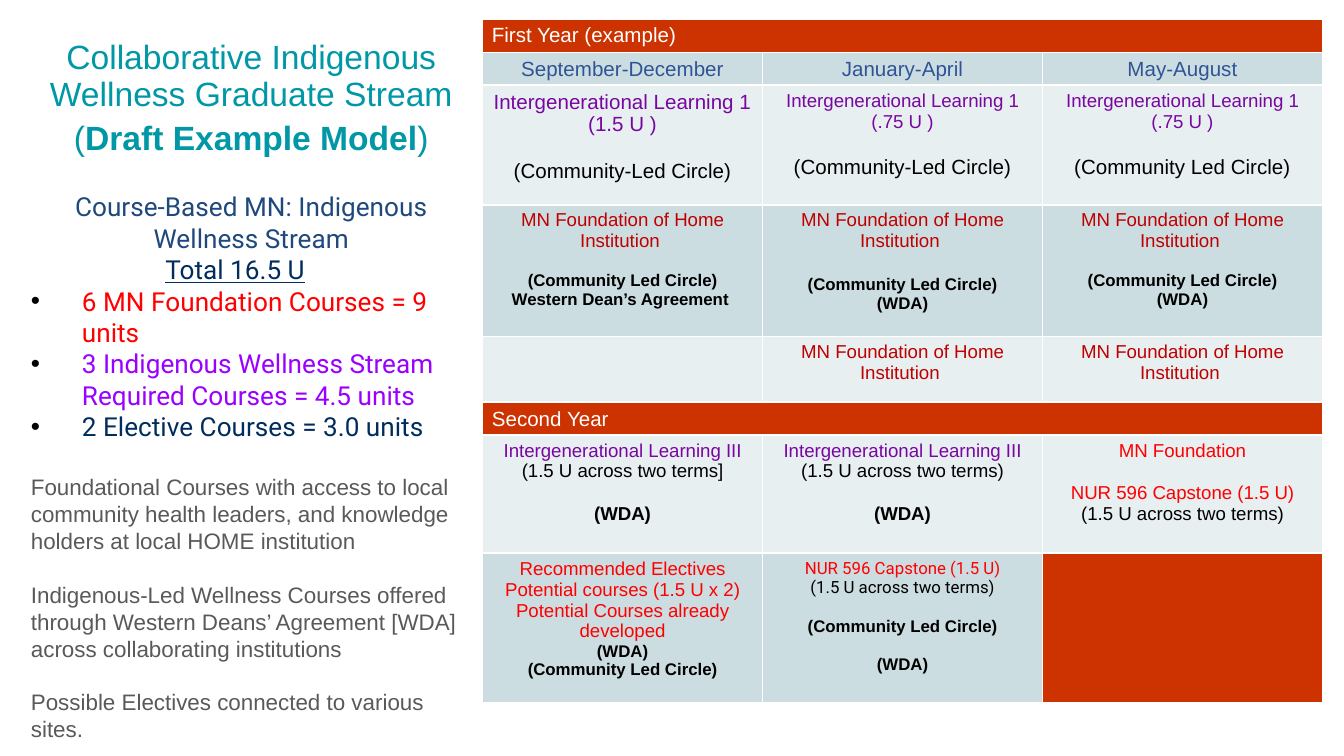
from lxml import etree
from pptx import Presentation
from pptx import util as u
from pptx.dml.color import RGBColor
from pptx.enum import text
from pptx.oxml import ns

RED, PALE, MIST, WHITE = "CC3300", "E7EFF1", "CCDDE1", "FFFFFF"
CENTER, LEFT = text.PP_ALIGN.CENTER, text.PP_ALIGN.LEFT
MARGINS = {"margin_left": 0.07, "margin_right": 0.07, "margin_top": 0.04, "margin_bottom": 0.02}

# size, colour, bold, font
STYLES = {
    "title": (18, "0097A7", False, "Arial"),
    "title bold": (18, "0097A7", True, "Arial"),
    "stream": (14, "1F487C", False, "Roboto"),
    "navy": (14, "002D5D", False, "Roboto"),
    "foundation count": (14, "FF0000", False, "Roboto"),
    "required count": (14, "9A00FF", False, "Roboto"),
    "note": (12, "595959", False, "Arial"),
    "year": (11, WHITE, False, "Arial"),
    "term": (11, "2F5496", False, "Arial"),
    "learning large": (11, "7906A0", False, "Arial"),
    "learning": (10, "7906A0", False, "Arial"),
    "circle": (11, "000000", False, "Arial"),
    "foundation": (10, "C00000", False, "Arial"),
    "bold": (9, "000000", True, "Arial"),
    "bold large": (10, "000000", True, "Arial"),
    "units": (10, "000000", False, "Arial"),
    "red": (10, "FF0000", False, "Arial"),
    "capstone": (9, "FF0000", False, "Roboto"),
    "capstone units": (9, "000000", False, "Roboto"),
}


def add_run(paragraph, style, words):
    run = paragraph.add_run()
    run.text = words
    size, color, bold, font = STYLES[style]
    for name, value in {"size": u.Pt(size), "bold": bold, "name": font}.items():
        setattr(run.font, name, value)
    run.font.color.rgb = RGBColor.from_string(color)
    return run


def write(frame, lines, align):
    """Fill a frame with (style, words, space before) lines and return its paragraphs."""
    for number, (style, words, *gap) in enumerate(lines):
        paragraph = frame.add_paragraph() if number else frame.paragraphs[0]
        paragraph.alignment = align
        if gap:
            paragraph.space_before = u.Pt(gap[0])
        add_run(paragraph, style, words)
    return frame.paragraphs


prs = Presentation()
prs.slide_width, prs.slide_height = u.Inches(10), u.Inches(10 * 9 / 16)
slide = prs.slides.add_slide(prs.slide_layouts[6])

# Left column: title and summary
frames = []
for top, height in ((0.1, 1.28), (1.38, 3.46)):
    frame = slide.shapes.add_textbox(u.Inches(0.16), u.Inches(top), u.Inches(3.42), u.Inches(height)).text_frame
    frame.word_wrap = True
    for side, margin in MARGINS.items():
        setattr(frame, side, u.Inches(margin))
    frames.append(frame)
title, summary = frames

title.vertical_anchor = text.MSO_ANCHOR.MIDDLE
title.margin_bottom = title.margin_top
heading = write(title, [("title", "Collaborative Indigenous Wellness Graduate Stream"), ("title", "(")], CENTER)
add_run(heading[1], "title bold", "Draft Example Model")
add_run(heading[1], "title", ")")
for paragraph in heading:
    paragraph.line_spacing = 0.9
    paragraph.space_after = u.Pt(4.5)

points = write(summary, [
    ("stream", "Course-Based MN: Indigenous Wellness Stream"),
    ("navy", "\t"),
    ("foundation count", "6 MN Foundation Courses = 9 units"),
    ("required count", "3 Indigenous Wellness Stream Required Courses = 4.5 units"),
    ("navy", "2 Elective Courses = 3.0 units"),
    ("note", "Foundational Courses with access to local community health leaders, "
             "and knowledge holders at local HOME institution", 16.9),
    ("note", "Indigenous-Led Wellness Courses offered through Western Deans’ Agreement [WDA] "
             "across collaborating institutions", 14.4),
    ("note", "Possible Electives connected to various sites.", 14.4),
], LEFT)
points[0].alignment = CENTER
add_run(points[1], "navy", "Total 16.5 U").font.underline = True
tab_stops = etree.SubElement(points[1]._p.get_or_add_pPr(), ns.qn("a:tabLst"))
etree.SubElement(tab_stops, ns.qn("a:tab"), pos=str(u.Inches(1)), algn="l")
for paragraph in points[2:5]:
    props = paragraph._p.get_or_add_pPr()
    props.set("marL", str(u.Inches(0.38)))
    props.set("indent", str(-u.Inches(0.38)))
    bullet_color = etree.SubElement(props, ns.qn("a:buClr"))
    etree.SubElement(bullet_color, ns.qn("a:srgbClr"), val="000000")
    etree.SubElement(props, ns.qn("a:buFont"), typeface="Arial")
    etree.SubElement(props, ns.qn("a:buChar"), char="•")

# Right column: two-year plan
HOME = ("foundation", "MN Foundation of Home Institution ")
CIRCLE, WDA = "(Community Led Circle)", ("bold", "(WDA)")
LEARNING_1, LEARNING_3 = "Intergenerational Learning 1", "Intergenerational Learning III"
TWO_TERMS, CAPSTONE = "(1.5 U across two terms)", "NUR 596 Capstone (1.5 U)"

# height, fill, cells
plan = [
    (0.25, RED, [[("year", "First Year (example)")]]),
    (0.24, MIST, [[("term", term)] for term in ("September-December", "January-April", "May-August")]),
    (0.89, PALE, [
        [("learning large", LEARNING_1), ("learning large", "(1.5 U )"),
         ("circle", "(Community-Led Circle)", 12.65)],
        [("learning", LEARNING_1), ("learning", "(.75 U )"), ("circle", "(Community-Led Circle)", 12.65)],
        [("learning", LEARNING_1), ("learning", "(.75 U )"), ("circle", CIRCLE, 12.65)],
    ]),
    (0.98, MIST, [
        [HOME, ("bold", CIRCLE, 10.35), ("bold", "Western Dean’s Agreement ")],
        [HOME, ("bold", CIRCLE, 12.65), WDA],
        [HOME, ("bold", CIRCLE, 10.35), WDA],
    ]),
    (0.49, PALE, [[], [HOME], [HOME]]),
    (0.24, RED, [[("year", "Second Year")]]),
    (0.88, PALE, [
        [("learning", LEARNING_3), ("units", "(1.5 U across two terms]"), ("bold large", "(WDA)", 11.5)],
        [("learning", LEARNING_3), ("units", TWO_TERMS), ("bold large", "(WDA)", 11.5)],
        [("red", "MN Foundation"), ("red", CAPSTONE, 11.5), ("units", TWO_TERMS)],
    ]),
    (1.11, MIST, [
        [("red", "Recommended Electives"), ("red", "Potential courses (1.5 U x 2)"),
         ("red", "Potential Courses already developed"), WDA, ("bold", CIRCLE)],
        [("capstone", CAPSTONE), ("capstone units", TWO_TERMS),
         ("bold", CIRCLE, 10.35), ("bold", "(WDA)", 10.35)],
        [],
    ]),
]
total_height = sum(height for height, fill, cells in plan)
table = slide.shapes.add_table(
    len(plan), 3, u.Inches(3.59), u.Inches(0.14), u.Inches(6.25), u.Inches(total_height)).table

for row, (height, fill, cells) in enumerate(plan):
    table.rows[row].height = u.Inches(height)
    banner = len(cells) == 1
    if banner:
        table.cell(row, 0).merge(table.cell(row, 2))
    for column in range(3):
        cell = table.cell(row, column)
        for side, margin in MARGINS.items():
            setattr(cell, side, u.Inches(margin))
        if column < len(cells):
            write(cell.text_frame, cells[column], LEFT if banner else CENTER)
        cell_props = cell._tc.get_or_add_tcPr()
        for edge in ("lnL", "lnR", "lnT", "lnB"):
            border = etree.SubElement(cell_props, ns.qn(f"a:{edge}"), w=str(u.Pt(1)))
            border_fill = etree.SubElement(border, ns.qn("a:solidFill"))
            etree.SubElement(border_fill, ns.qn("a:srgbClr"), val=WHITE)
        cell.fill.solid()
        last = row == len(plan) - 1 and column == 2
        cell.fill.fore_color.rgb = RGBColor.from_string(RED if last else fill)

prs.save("out.pptx")
